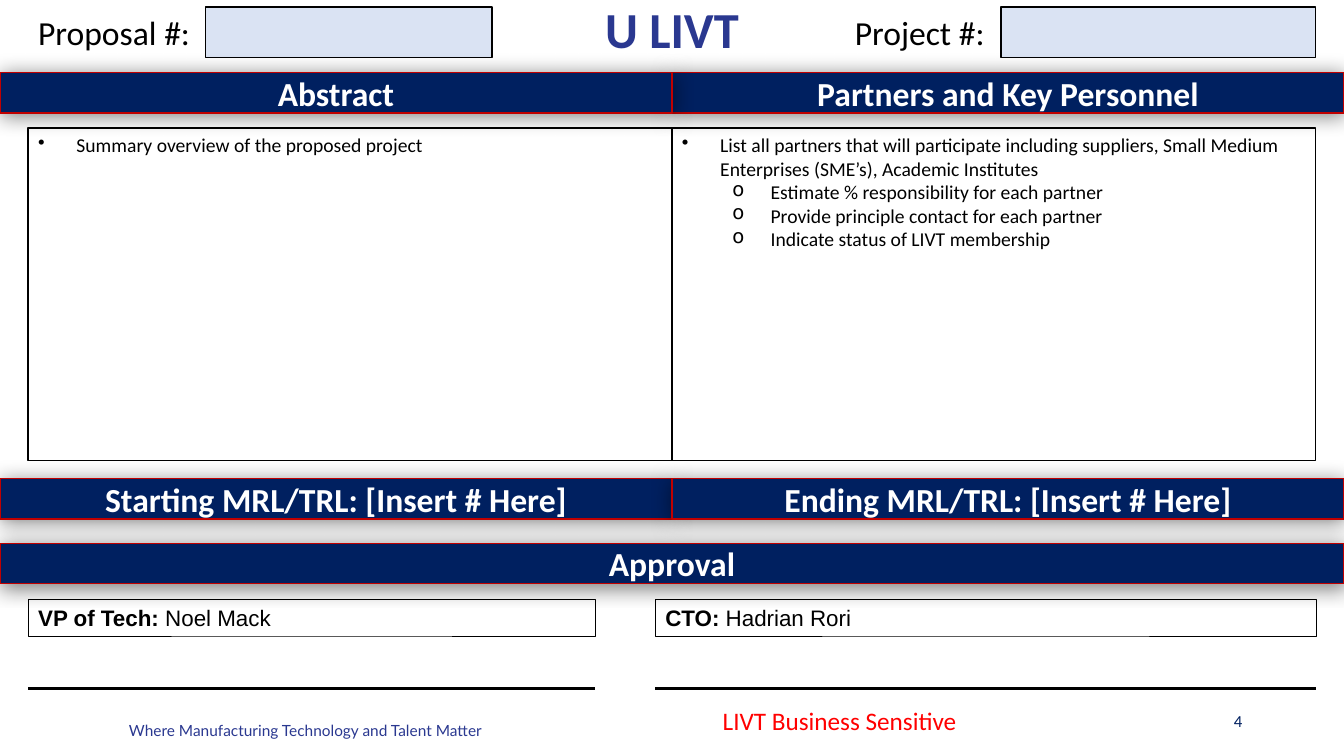
import pptx
import pptx.dml.color
import pptx.enum.shapes
import pptx.enum.text
import pptx.oxml
import pptx.oxml.ns
import pptx.util
import lxml.etree

Inches = pptx.util.Inches
Align = pptx.enum.text.PP_ALIGN
Anchor = pptx.enum.text.MSO_ANCHOR

WIDTH, HEIGHT = 13.33, 7.5
HALF = WIDTH / 2
MARGIN = 0.28
NAVY, BLUE, PALE, BLACK = "002060", "2A3890", "DAE3F3", "000000"
SHADOW = (
    f'<a:effectLst {pptx.oxml.ns.nsdecls("a")}>'
    '<a:outerShdw blurRad="190500" dist="19050" dir="5400000" algn="ctr" rotWithShape="0">'
    '<a:srgbClr val="000000"><a:alpha val="50000"/></a:srgbClr>'
    '</a:outerShdw></a:effectLst>'
)


def color(value):
    return pptx.dml.color.RGBColor.from_string(value)


def lengths(box):
    return [Inches(value) for value in box]


def format_run(run, size, font, ink, bold=False):
    run.font.size = pptx.util.Pt(size)
    run.font.name = font
    run.font.color.rgb = color(ink)
    run.font.bold = bold


def add_label(slide, box, text, size, ink, font="Calibri", bold=False,
              align=Align.LEFT, anchor=Anchor.TOP):
    frame = slide.shapes.add_textbox(*lengths(box)).text_frame
    frame.word_wrap = True
    frame.vertical_anchor = anchor
    paragraph = frame.paragraphs[0]
    paragraph.text = text
    paragraph.alignment = align
    format_run(paragraph.runs[0], size, font, ink, bold)
    return paragraph


def add_box(slide, box, fill=None, line=BLACK, weight=1):
    shape = slide.shapes.add_shape(
        pptx.enum.shapes.MSO_SHAPE.RECTANGLE, *lengths(box))
    shape.shadow.inherit = False
    if fill:
        shape.fill.solid()
        shape.fill.fore_color.rgb = color(fill)
    else:
        shape.fill.background()
    shape.line.color.rgb = color(line)
    shape.line.width = pptx.util.Pt(weight)
    shape.text_frame.word_wrap = True
    shape.text_frame.vertical_anchor = Anchor.TOP
    return shape


def add_banner(slide, left, top, width, text):
    shape = add_box(slide, (left, top, width, 0.4), NAVY, "C00000")
    properties = shape._element.spPr
    properties.remove(properties.find(pptx.oxml.ns.qn("a:effectLst")))
    properties.append(pptx.oxml.parse_xml(SHADOW))
    shape.text_frame.vertical_anchor = Anchor.MIDDLE
    paragraph = shape.text_frame.paragraphs[0]
    paragraph.text = text
    paragraph.alignment = Align.CENTER
    format_run(paragraph.runs[0], 24, "Calibri", "FFFFFF", True)


def add_bullet_panel(slide, box, items):
    frame = add_box(slide, box).text_frame
    for index, (level, text) in enumerate(items):
        paragraph = frame.add_paragraph() if index else frame.paragraphs[0]
        paragraph.text = text
        paragraph.level = level
        paragraph.alignment = Align.LEFT
        properties = paragraph._p.get_or_add_pPr()
        properties.set("marL", str(Inches(0.38 + 0.5 * level)))
        properties.set("indent", str(Inches(-0.38)))
        bullet = lxml.etree.SubElement(properties, pptx.oxml.ns.qn("a:buChar"))
        bullet.set("char", "•o"[level])
        format_run(paragraph.runs[0], 14, "Calibri", BLACK)


def add_number_field(slide, left, field_left, right, text):
    add_label(slide, (left, 0.07, field_left - left, 0.5), text, 24, BLACK)
    add_box(slide, (field_left, 0.07, right - field_left, 0.5), PALE)


def add_signature(slide, left, top, width, role, person):
    shape = add_box(slide, (left, top, width, 0.37), weight=0.25)
    paragraph = shape.text_frame.paragraphs[0]
    paragraph.alignment = Align.LEFT
    for text, bold in ((role, True), (f" {person}", False)):
        run = paragraph.add_run()
        run.text = text
        format_run(run, 16, "Arial", BLACK, bold)
    line_top = top + 0.89
    line = slide.shapes.add_connector(
        pptx.enum.shapes.MSO_CONNECTOR.STRAIGHT,
        *lengths((left, line_top, left + width, line_top)))
    line.line.color.rgb = color(BLACK)
    line.line.width = pptx.util.Pt(2.25)
    lxml.etree.SubElement(line._element.spPr, pptx.oxml.ns.qn("a:effectLst"))


def add_header(slide):
    title = add_label(slide, (4.98, 0, 3.37, 0.72), "U LIVT", 36, BLUE,
                      bold=True, align=Align.CENTER)
    title.line_spacing = 0.9
    add_number_field(slide, MARGIN, 2.04, 4.88, "Proposal #:")
    add_number_field(slide, 8.38, 9.93, WIDTH - MARGIN, "Project #:")


def add_overview(slide, top):
    panel_width = HALF - MARGIN
    add_banner(slide, HALF, top, HALF, "Partners and Key Personnel")
    add_banner(slide, 0, top, HALF, "Abstract")
    add_bullet_panel(slide, (HALF, top + 0.55, panel_width, 3.3), [
        (0, "List all partners that will participate including suppliers, "
            "Small Medium Enterprises (SME’s), Academic Institutes"),
        (1, "Estimate % responsibility for each partner"),
        (1, "Provide principle contact for each partner"),
        (1, "Indicate status of LIVT membership"),
    ])
    add_bullet_panel(slide, (MARGIN, top + 0.55, panel_width, 3.3), [
        (0, "Summary overview of the proposed project"),
    ])


def add_approval(slide, top):
    add_banner(slide, 0, top, WIDTH, "Approval")
    add_signature(slide, 6.5, top + 0.55, 6.55, "CTO:", "Hadrian Rori")
    add_signature(slide, MARGIN, top + 0.55, 5.62, "VP of Tech:", "Noel Mack")


def add_readiness(slide, top):
    for column, stage in enumerate(("Starting", "Ending")):
        add_banner(slide, column * HALF, top, HALF,
                   f"{stage} MRL/TRL: [Insert # Here]")


def add_footer(slide, top):
    add_label(slide, (1.18, top + 0.15, 4.27, 0.29),
              "Where Manufacturing Technology and Talent Matter",
              11, BLUE, "Lato")
    add_label(slide, (7.07, top, 4.5, 0.4), "LIVT Business Sensitive",
              18, "FF0000")
    add_label(slide, (9.42, top, 3, 0.4), "4", 12, NAVY,
              align=Align.RIGHT, anchor=Anchor.MIDDLE)


def main():
    presentation = pptx.Presentation()
    presentation.slide_width = Inches(WIDTH)
    presentation.slide_height = Inches(HEIGHT)
    slide = presentation.slides.add_slide(presentation.slide_layouts[6])
    add_header(slide)
    add_approval(slide, 5.39)
    add_overview(slide, 0.72)
    add_readiness(slide, 4.75)
    add_footer(slide, 6.95)
    presentation.save("out.pptx")


if __name__ == "__main__":
    main()
